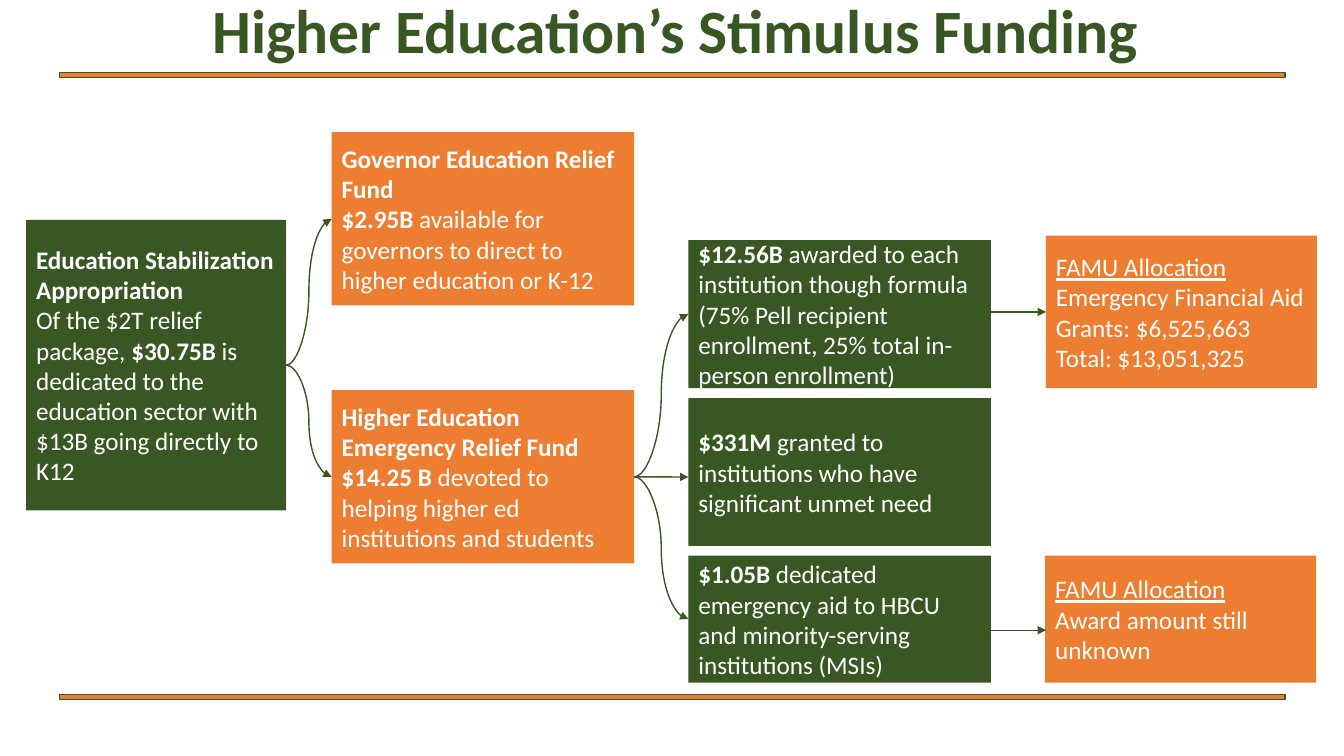
from lxml import etree
from pptx import Presentation
from pptx import util as u
from pptx.dml.color import RGBColor
from pptx.enum import shapes, text
from pptx.oxml import ns

Cm, Pt = u.Cm, u.Pt
COLORS = {"green": "385723", "orange": "ED7D31", "white": "FFFFFF"}
TOP, LEFT, BOTTOM, RIGHT = range(4)
STRAIGHT = shapes.MSO_CONNECTOR.STRAIGHT
CURVE = shapes.MSO_CONNECTOR.CURVE


def rgb(name):
    return RGBColor.from_string(COLORS[name])


def add_rect(s, x, y, w, h, color):
    sp = s.shapes.add_shape(shapes.MSO_SHAPE.RECTANGLE, Cm(x), Cm(y), Cm(w), Cm(h))
    sp.shadow.inherit = False
    sp.fill.solid()
    sp.fill.fore_color.rgb = rgb(color)
    return sp


def add_rule(s, y):
    sp = add_rect(s, 1.5, y, 30.89, 0.13, "orange")
    sp.line.color.rgb = rgb("green")
    sp.line.width = Pt(1)


def add_box(s, x, y, w, h, color, *paragraphs):
    """Each paragraph is a list of (text, style); style is "", "b" or "u"."""
    sp = add_rect(s, x, y, w, h, color)
    sp.line.fill.background()
    tf = sp.text_frame
    tf.word_wrap = True
    tf.vertical_anchor = text.MSO_ANCHOR.MIDDLE
    for i, parts in enumerate(paragraphs):
        p = tf.add_paragraph() if i else tf.paragraphs[0]
        p.alignment = text.PP_ALIGN.LEFT
        p.font.name, p.font.size = "Calibri", Pt(18)
        p.font.color.rgb = rgb("white")
        for content, style in parts:
            if content == "\n":
                p.add_line_break()
                continue
            r = p.add_run()
            r.text = content
            if style == "b":
                r.font.bold = True
            elif style == "u":
                r.font.underline = True
    return sp


def add_arrow(s, kind, start=(0, 0), end=(0, 0), source=None, target=None):
    """Draw from point to point; a given source or target box takes over that end."""
    c = s.shapes.add_connector(kind, *map(Cm, start + end))
    if source is not None:
        c.begin_connect(source, RIGHT)
    if target is not None:
        c.end_connect(target, LEFT)
    c.line.color.rgb = rgb("green")
    c.line.width = Pt(1)
    etree.SubElement(c.line._get_or_add_ln(), ns.qn("a:tailEnd"), type="triangle")
    etree.SubElement(c._element.spPr, ns.qn("a:effectLst"))


def set_title(s, content):
    sp = s.shapes.title
    sp.left, sp.top, sp.width, sp.height = Cm(4.34), Cm(0.13), Cm(25.4), Cm(1.68)
    tf = sp.text_frame
    tf.text = content
    tf.word_wrap = True
    tf.auto_size = text.MSO_AUTO_SIZE.NONE
    tf.vertical_anchor = text.MSO_ANCHOR.BOTTOM
    p = tf.paragraphs[0]
    p.alignment = text.PP_ALIGN.CENTER
    p.line_spacing = 0.9
    p.font.name, p.font.size, p.font.bold = "Calibri", Pt(44), True
    p.font.color.rgb = rgb("green")


def main():
    prs = Presentation()
    prs.slide_width, prs.slide_height = Cm(33.87), Cm(19.05)
    s = prs.slides.add_slide(prs.slide_layouts[5])

    # Title and rules
    set_title(s, "Higher Education’s Stimulus Funding")
    for y in (1.83, 17.5):
        add_rule(s, y)

    # Appropriation
    appropriation = add_box(
        s, 0.66, 5.54, 6.55, 7.32, "green",
        [("Education Stabilization Appropriation", "b")],
        [("Of the $2T relief package, ", ""), ("$30.75B ", "b"),
         ("is dedicated to the education sector with $13B going directly to K12", "")])

    # Relief funds
    governor = add_box(
        s, 8.36, 3.33, 7.62, 4.37, "orange",
        [("Governor Education Relief Fund", "b"), ("\n", ""), ("$2.95B ", "b"),
         ("available for governors to direct to higher education or K-12", "")])
    higher_ed = add_box(
        s, 8.36, 9.83, 7.62, 4.37, "orange",
        [("Higher Education", "b")],
        [("Emergency Relief Fund", "b"), ("\n", ""), ("$14.25 B ", "b"),
         ("devoted to helping higher ed institutions and students", "")])

    # Shares of the higher education fund
    formula, _, minority = [
        add_box(s, 17.35, y, 7.62, h, "green", [(amount, "b"), (purpose, "")])
        for y, h, amount, purpose in (
            (6.05, 3.73, "$12.56B ", "awarded to each institution though formula "
             "(75% Pell recipient enrollment, 25% total in-person enrollment)"),
            (10.03, 3.73, "$331M ",
             "granted to institutions who have significant unmet need"),
            (14, 3.2, "$1.05B ", "dedicated emergency aid to HBCU and "
             "minority-serving institutions (MSIs)"))]

    # University allocations
    heading = [("FAMU Allocation", "u")]
    aid = add_box(s, 26.36, 5.94, 6.83, 3.84, "orange", heading,
                  [("Emergency Financial Aid Grants: $6,525,663", "")],
                  [("Total: $13,051,325", "")])
    add_box(s, 26.34, 14, 6.83, 3.2, "orange", heading,
            [("Award amount still unknown", "")])

    # Arrows
    for source, target in ((appropriation, governor), (appropriation, higher_ed),
                           (higher_ed, formula), (higher_ed, minority)):
        add_arrow(s, CURVE, source=source, target=target)
    add_arrow(s, STRAIGHT, end=(17.35, 12.02), source=higher_ed)
    add_arrow(s, STRAIGHT, start=(24.97, 7.86), target=aid)
    add_arrow(s, STRAIGHT, start=(24.97, 15.88), end=(26.36, 15.88))

    prs.save("out.pptx")


if __name__ == "__main__":
    main()
